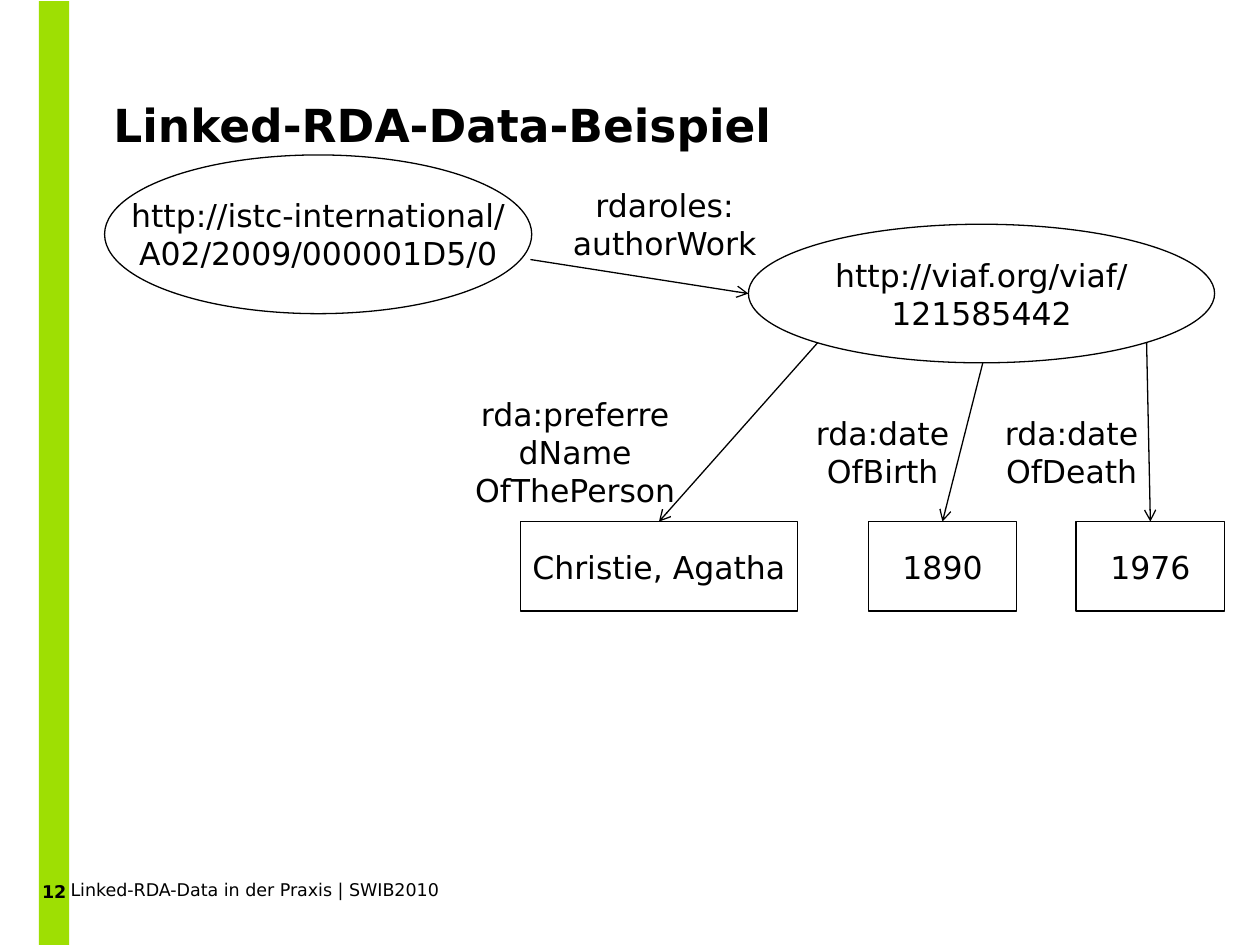
from lxml.etree import SubElement
from pptx import Presentation
from pptx.dml.color import RGBColor
from pptx.enum.shapes import MSO_CONNECTOR, MSO_SHAPE
from pptx.enum.text import MSO_ANCHOR, PP_ALIGN
from pptx.oxml.ns import qn
from pptx.util import Inches, Pt

FONT = "DejaVu Sans"
COLORS = {"black": "000000", "white": "FFFFFF", "green": "9EDF03"}
RECTANGLE_TOP = 0


def color(name):
    return RGBColor.from_string(COLORS[name])


def write_text(shape, text, size=18, bold=False, align=PP_ALIGN.CENTER,
               anchor=MSO_ANCHOR.MIDDLE, margins=(0.1, 0.05, 0.1, 0.05),
               wrap=False, line_spacing=None):
    """Fill a shape with text: \\n starts a paragraph, \\v breaks a line."""
    frame = shape.text_frame
    frame.text = text
    frame.word_wrap = wrap
    frame.vertical_anchor = anchor
    (frame.margin_left, frame.margin_top,
     frame.margin_right, frame.margin_bottom) = map(Inches, margins)
    for paragraph in frame.paragraphs:
        paragraph.alignment = align
        paragraph.line_spacing = line_spacing
        for run in paragraph.runs:
            run.font.name = FONT
            run.font.size = Pt(size)
            run.font.bold = bold
            run.font.color.rgb = color("black")


def add_text(slide, text, box, **text_format):
    textbox = slide.shapes.add_textbox(*map(Inches, box))
    write_text(textbox, text, **text_format)


def add_node(slide, kind, text, box, fill="white", outlined=True, **text_format):
    shape = slide.shapes.add_shape(kind, *map(Inches, box))
    shape.shadow.inherit = False
    shape.fill.solid()
    shape.fill.fore_color.rgb = color(fill)
    if outlined:
        shape.line.color.rgb = color("black")
        shape.line.width = Pt(0.75)
    else:
        shape.line.fill.background()
    write_text(shape, text, **text_format)
    return shape


def add_arrow(slide, start, end, target=None):
    """Draw an arrow, joined to the top of the target rectangle if given."""
    connector = slide.shapes.add_connector(
        MSO_CONNECTOR.STRAIGHT, *map(Inches, start + end))
    if target is not None:
        connector.end_connect(target, RECTANGLE_TOP)
    connector.line.color.rgb = color("black")
    connector.line.width = Pt(0.75)
    SubElement(connector.line._get_or_add_ln(), qn("a:tailEnd"), type="arrow")
    SubElement(connector._element.spPr, qn("a:effectLst"))


def add_frame(slide):
    """Add the side bar with the page number, the title and the footer."""
    add_node(slide, MSO_SHAPE.RECTANGLE, "12", (0.31, 0.01, 0.24, 7.5),
             fill="green", outlined=False, size=10, bold=True,
             anchor=MSO_ANCHOR.BOTTOM, margins=(0, 0.05, 0, 0.35))
    flush_left = dict(align=PP_ALIGN.LEFT, anchor=MSO_ANCHOR.TOP,
                      margins=(0, 0, 0, 0), wrap=True)
    add_text(slide, "Linked-RDA-Data-Beispiel", (0.9, 0.79, 7.32, 0.93),
             size=26, bold=True, line_spacing=Pt(30), **flush_left)
    add_text(slide, "Linked-RDA-Data in der Praxis | SWIB2010",
             (0.56, 6.98, 8.61, 0.17), size=10, **flush_left)


def add_graph(slide):
    add_node(slide, MSO_SHAPE.OVAL,
             "http://istc-international/\vA02/2009/000001D5/0",
             (0.83, 1.23, 3.39, 1.26))
    add_node(slide, MSO_SHAPE.OVAL, "http://viaf.org/viaf/\v121585442",
             (5.94, 1.78, 3.7, 1.1))
    add_arrow(slide, (4.21, 2.06), (5.94, 2.33))

    # value, left, width, start of the arrow
    literals = [
        ("Christie, Agatha", 4.13, 2.2, (6.49, 2.72)),
        ("1890", 6.89, 1.18, (7.8, 2.88)),
        ("1976", 8.54, 1.18, (9.1, 2.72)),
    ]
    top = 4.14
    for value, left, width, start in literals:
        literal = add_node(slide, MSO_SHAPE.RECTANGLE, value,
                           (left, top, width, 0.71))
        add_arrow(slide, start, (left + width / 2, top), literal)

    labels = [
        ("rdaroles:\nauthorWork", 4.37, 1.47),
        ("rda:preferredName\nOfThePerson", 3.66, 3.28),
        ("rda:date\nOfBirth", 6.1, 3.28),
        ("rda:date\nOfDeath", 7.6, 3.28),
    ]
    for text, left, label_top in labels:
        add_text(slide, text, (left, label_top, 1.81, 0.61))


def main():
    presentation = Presentation()
    presentation.slide_width = Inches(10)
    presentation.slide_height = Inches(7.5)
    slide = presentation.slides.add_slide(presentation.slide_layouts[6])
    add_frame(slide)
    add_graph(slide)
    presentation.save("out.pptx")


if __name__ == "__main__":
    main()
